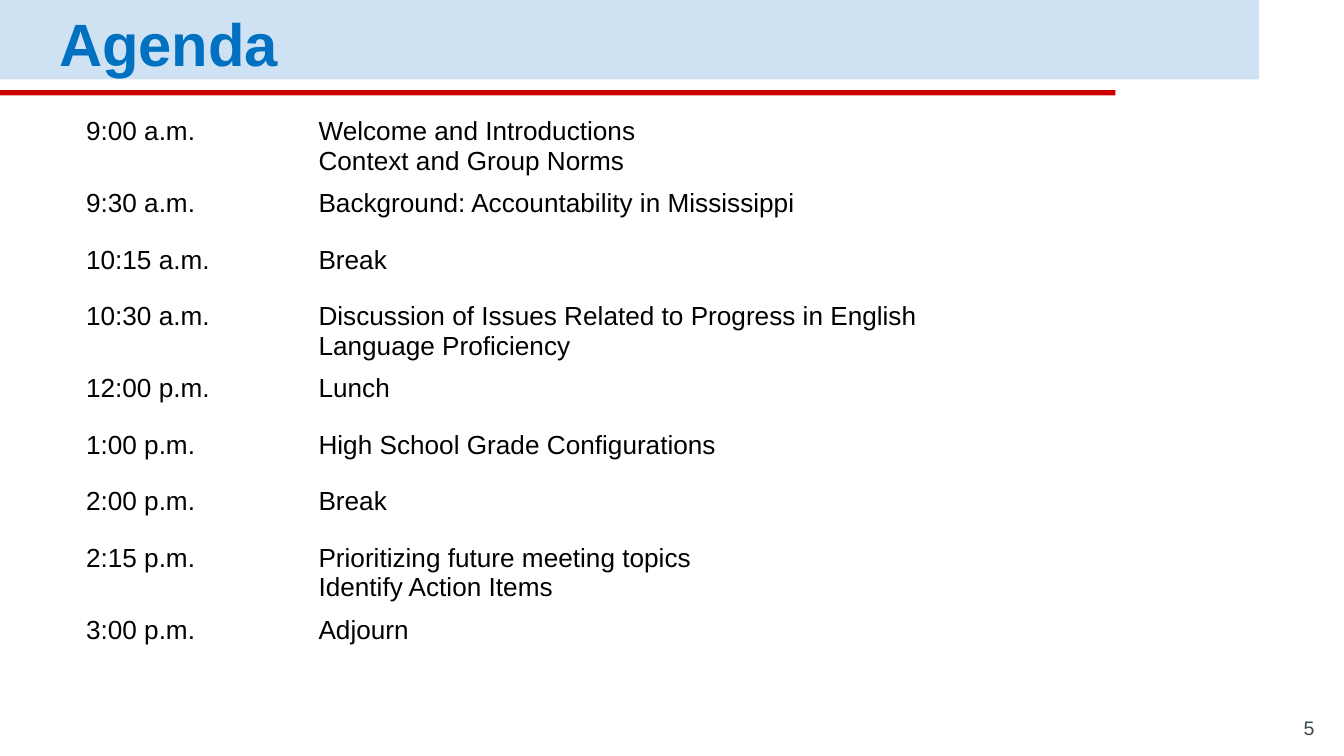
from pptx import Presentation
from pptx.dml.color import RGBColor
from pptx.enum.shapes import MSO_SHAPE
from pptx.enum.text import MSO_ANCHOR, MSO_AUTO_SIZE, PP_ALIGN
from pptx.util import Inches, Pt

PALE_BLUE = RGBColor(0xCF, 0xE2, 0xF3)
RED = RGBColor(0xCC, 0x00, 0x00)
BLUE = RGBColor(0x00, 0x70, 0xC0)
SLATE = RGBColor(0x3A, 0x49, 0x50)
BLACK = RGBColor(0x00, 0x00, 0x00)

AGENDA = [
    ("9:00 a.m.", "Welcome and Introductions\nContext and Group Norms"),
    ("9:30 a.m.", "Background: Accountability in Mississippi"),
    ("10:15 a.m.", "Break"),
    ("10:30 a.m.", "Discussion of Issues Related to Progress in English "
                   "Language Proficiency"),
    ("12:00 p.m.", "Lunch"),
    ("1:00 p.m.", "High School Grade Configurations"),
    ("2:00 p.m.", "Break"),
    ("2:15 p.m.", "Prioritizing future meeting topics\nIdentify Action Items"),
    ("3:00 p.m.", "Adjourn"),
]
TIME_WIDTH = 1.73
ROW_HEIGHT, TALL_ROW_HEIGHT = 0.42, 0.48
LINE_CHARS = 60  # longer topics wrap onto a second line


def style_text(tf, size, color, bold=False):
    for p in tf.paragraphs:
        for r in p.runs:
            r.font.name = "Arial"
            r.font.size = Pt(size)
            r.font.color.rgb = color
            r.font.bold = bold


def set_frame(tf, anchor):
    tf.word_wrap = True
    tf.auto_size = MSO_AUTO_SIZE.NONE
    tf.vertical_anchor = anchor
    tf.margin_left = tf.margin_right = Inches(0.1)
    tf.margin_top = tf.margin_bottom = Inches(0.1)


def add_bar(slide, x, y, w, h, color):
    bar = slide.shapes.add_shape(MSO_SHAPE.RECTANGLE, Inches(x), Inches(y),
                                 Inches(w), Inches(h))
    bar.shadow.inherit = False
    bar.fill.solid()
    bar.fill.fore_color.rgb = color
    bar.line.fill.background()
    return bar


def add_header(slide, x, y, w, h, text):
    # Band behind the title, with a shorter rule below it
    band = add_bar(slide, x, y, w, h, PALE_BLUE)
    rule = add_bar(slide, x, y + h + 0.08, 8.3, 0.04, RED)

    title = slide.shapes.title
    title.left, title.top = Inches(x + 0.34), Inches(y + 0.03)
    title.width, title.height = Inches(w - 0.34), Inches(h - 0.1)
    tf = title.text_frame
    set_frame(tf, MSO_ANCHOR.MIDDLE)
    tf.text = text
    p = tf.paragraphs[0]
    p.alignment = PP_ALIGN.LEFT
    p.line_spacing = 1.15
    p.space_after = Pt(16)
    style_text(tf, 32, BLUE, bold=True)

    # Keep the bars behind the title
    for bar in (band, rule):
        title._element.addprevious(bar._element)


def add_agenda(slide, x, y, w, rows):
    heights = [TALL_ROW_HEIGHT if "\n" in topic or len(topic) > LINE_CHARS
               else ROW_HEIGHT for _, topic in rows]
    frame = slide.shapes.add_table(len(rows), 2, Inches(x), Inches(y),
                                   Inches(w), Inches(sum(heights)))
    table = frame.table
    table.first_row = table.horz_banding = False
    table.columns[0].width = Inches(TIME_WIDTH)
    table.columns[1].width = Inches(w - TIME_WIDTH)
    for row, height, texts in zip(table.rows, heights, rows):
        row.height = Inches(height)
        for cell, text in zip(row.cells, texts):
            cell.fill.background()
            cell.text_frame.text = text
            style_text(cell.text_frame, 14, BLACK)


def add_page_number(slide, x, y, w, h, number):
    box = slide.shapes.add_textbox(Inches(x), Inches(y), Inches(w), Inches(h))
    tf = box.text_frame
    set_frame(tf, MSO_ANCHOR.BOTTOM)
    tf.text = str(number)
    tf.paragraphs[0].alignment = PP_ALIGN.RIGHT
    style_text(tf, 10.5, SLATE)


def main():
    prs = Presentation()
    prs.slide_width = Inches(10)
    prs.slide_height = prs.slide_width * 9 // 16  # widescreen
    slide = prs.slides.add_slide(prs.slide_layouts[5])  # title only
    add_header(slide, 0, 0, 9.37, 0.59, "Agenda")
    add_page_number(slide, 9.28, 5.34, 0.6, 0.26, 5)
    add_agenda(slide, 0.54, 0.82, 7.29, AGENDA)
    prs.save("out.pptx")


if __name__ == "__main__":
    main()
